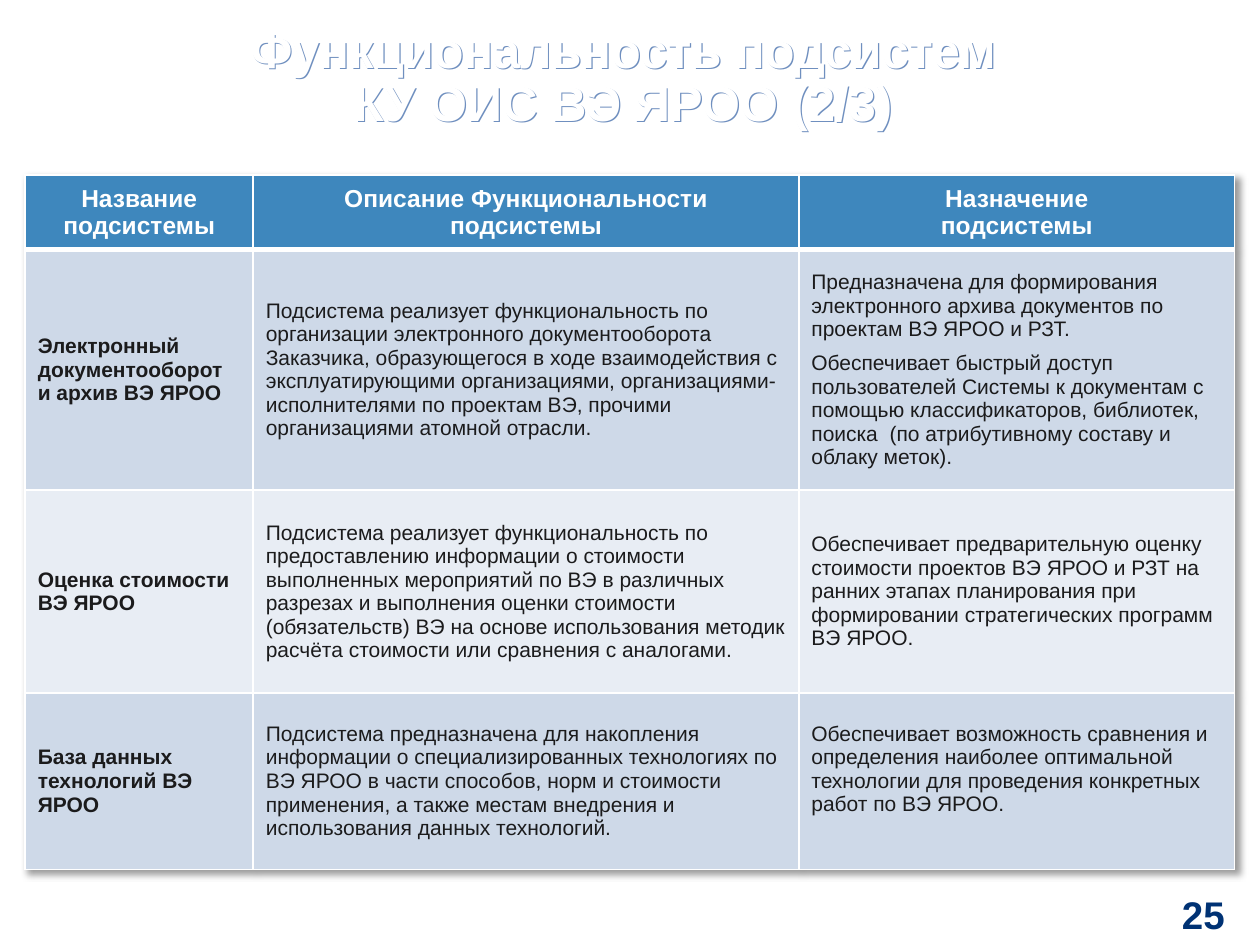
from dataclasses import dataclass

from lxml.etree import SubElement
from pptx import Presentation
from pptx.dml.color import RGBColor
from pptx.enum.text import MSO_ANCHOR, PP_ALIGN
from pptx.oxml import parse_xml
from pptx.oxml.ns import nsdecls, qn
from pptx.util import Inches, Pt


@dataclass(frozen=True)
class Theme:
    font: str = "Arial"
    white: str = "FFFFFF"
    navy: str = "003274"
    ink: str = "1B1B1C"
    header: str = "3E87BD"
    bands: tuple = ("CED9E8", "E8EDF4")
    title_shadow: str = "6F8FBF"
    table_shadow: str = "000000"
    title_size: int = 28
    number_size: int = 22
    header_size: int = 14
    body_size: int = 12


THEME = Theme()

COLUMN_WIDTHS = (1.81, 4.33, 3.46)
ROW_HEIGHTS = (0.59, 1.91, 1.61, 1.4)

# Each cell is a list of paragraphs
HEADINGS = (
    ["Название подсистемы"],
    ["Описание Функциональности", "подсистемы"],
    ["Назначение", "подсистемы"],
)
SUBSYSTEMS = (
    (
        ["Электронный документооборот и архив ВЭ ЯРОО"],
        ["Подсистема реализует функциональность по организации электронного "
         "документооборота Заказчика, образующегося в ходе взаимодействия с "
         "эксплуатирующими организациями, организациями-исполнителями по "
         "проектам ВЭ, прочими организациями атомной отрасли."],
        ["Предназначена для формирования электронного архива документов по "
         "проектам ВЭ ЯРОО и РЗТ.",
         "Обеспечивает быстрый доступ пользователей Системы к документам с "
         "помощью классификаторов, библиотек, поиска  (по атрибутивному "
         "составу и облаку меток)."],
    ),
    (
        ["Оценка стоимости ВЭ ЯРОО"],
        ["Подсистема реализует функциональность по предоставлению информации "
         "о стоимости выполненных мероприятий по ВЭ в различных разрезах и "
         "выполнения оценки стоимости (обязательств) ВЭ на основе "
         "использования методик расчёта стоимости или сравнения с аналогами."],
        ["Обеспечивает предварительную оценку стоимости проектов ВЭ ЯРОО и "
         "РЗТ на ранних этапах планирования при формировании стратегических "
         "программ ВЭ ЯРОО."],
    ),
    (
        ["База данных технологий ВЭ ЯРОО"],
        ["Подсистема предназначена для накопления информации о "
         "специализированных технологиях по ВЭ ЯРОО в части способов, норм и "
         "стоимости применения, а также местам внедрения и использования "
         "данных технологий."],
        ["Обеспечивает возможность сравнения и определения наиболее "
         "оптимальной технологии для проведения конкретных работ по ВЭ ЯРОО."],
    ),
)


def set_attributes(target, values):
    for name, value in values.items():
        setattr(target, name, value)


def write_paragraphs(frame, texts, size, color, bold, align, gap=0, spacing=1.0):
    for index, text in enumerate(texts):
        paragraph = frame.add_paragraph() if index else frame.paragraphs[0]
        set_attributes(paragraph, {"alignment": align, "line_spacing": spacing,
                                   "space_before": Pt(gap if index else 0)})
        run = paragraph.add_run()
        run.text = text
        set_attributes(run.font, {"name": THEME.font, "size": Pt(size), "bold": bold})
        run.font.color.rgb = RGBColor.from_string(color)


def make_shadow(color, distance, blur, opacity):
    return parse_xml(
        f'<a:effectLst {nsdecls("a")}><a:outerShdw blurRad="{Pt(blur)}" '
        f'dist="{Pt(distance)}" dir="2700000" algn="tl" rotWithShape="0">'
        f'<a:srgbClr val="{color}"><a:alpha val="{opacity * 1000}"/></a:srgbClr>'
        "</a:outerShdw></a:effectLst>")


def add_text(slide, box, text, **style):
    label = slide.shapes.add_textbox(*map(Inches, box))
    set_attributes(label.text_frame, {
        "word_wrap": True, "vertical_anchor": MSO_ANCHOR.MIDDLE,
        "margin_left": 0, "margin_right": 0, "margin_top": 0, "margin_bottom": 0})
    write_paragraphs(label.text_frame, [text], bold=True, **style)
    return label


def set_borders(cell, top=1, bottom=1):
    properties = cell._tc.get_or_add_tcPr()
    for side, width in {"L": 1, "R": 1, "T": top, "B": bottom}.items():
        line = SubElement(properties, qn(f"a:ln{side}"), w=str(Pt(width)))
        fill = SubElement(line, qn("a:solidFill"))
        SubElement(fill, qn("a:srgbClr"), val=THEME.white)


def fill_cell(cell, texts, fill, borders, **style):
    set_attributes(cell, {
        "vertical_anchor": MSO_ANCHOR.MIDDLE,
        "margin_left": Inches(0.1), "margin_right": Inches(0.1),
        "margin_top": Inches(0.05), "margin_bottom": Inches(0.05)})
    set_borders(cell, **borders)
    cell.fill.solid()
    cell.fill.fore_color.rgb = RGBColor.from_string(fill)
    write_paragraphs(cell.text_frame, texts, **style)


def add_subsystem_table(slide):
    table = slide.shapes.add_table(
        len(ROW_HEIGHTS), len(COLUMN_WIDTHS), Inches(0.2), Inches(1.39),
        Inches(sum(COLUMN_WIDTHS)), Inches(sum(ROW_HEIGHTS))).table
    table._tbl.tblPr.insert(0, make_shadow(THEME.table_shadow, 3, 4, 40))
    for column, width in zip(table.columns, COLUMN_WIDTHS):
        column.width = Inches(width)
    for row, height in zip(table.rows, ROW_HEIGHTS):
        row.height = Inches(height)

    # Header row with a heavier rule below it
    for column, texts in enumerate(HEADINGS):
        fill_cell(table.cell(0, column), texts, THEME.header, {"bottom": 3},
                  size=THEME.header_size, color=THEME.white, bold=True,
                  align=PP_ALIGN.CENTER)

    # Banded subsystem rows, names in bold
    for row, subsystem in enumerate(SUBSYSTEMS, start=1):
        for column, texts in enumerate(subsystem):
            fill_cell(table.cell(row, column), texts, THEME.bands[(row - 1) % 2],
                      {"top": 3 if row == 1 else 1},
                      size=THEME.body_size, color=THEME.ink, bold=column == 0,
                      align=PP_ALIGN.LEFT, gap=6)

    # The last purpose starts level with the description beside it
    table.cell(len(SUBSYSTEMS), 2).margin_bottom = Inches(0.24)


def main():
    presentation = Presentation()
    set_attributes(presentation, {"slide_width": Inches(10), "slide_height": Inches(7.5)})
    slide = presentation.slides.add_slide(presentation.slide_layouts[6])

    # Title
    title = add_text(slide, (1.93, 0, 6.03, 1.25),
                     "Функциональность подсистем КУ ОИС ВЭ ЯРОО (2/3)",
                     size=THEME.title_size, color=THEME.white,
                     align=PP_ALIGN.CENTER, spacing=0.9)
    title._element.spPr.append(make_shadow(THEME.title_shadow, 1, 0, 100))

    # Page number
    add_text(slide, (9.11, 7.05, 0.61, 0.41), "25", size=THEME.number_size,
             color=THEME.navy, align=PP_ALIGN.RIGHT)

    # Subsystems
    add_subsystem_table(slide)

    presentation.save("out.pptx")


if __name__ == "__main__":
    main()
